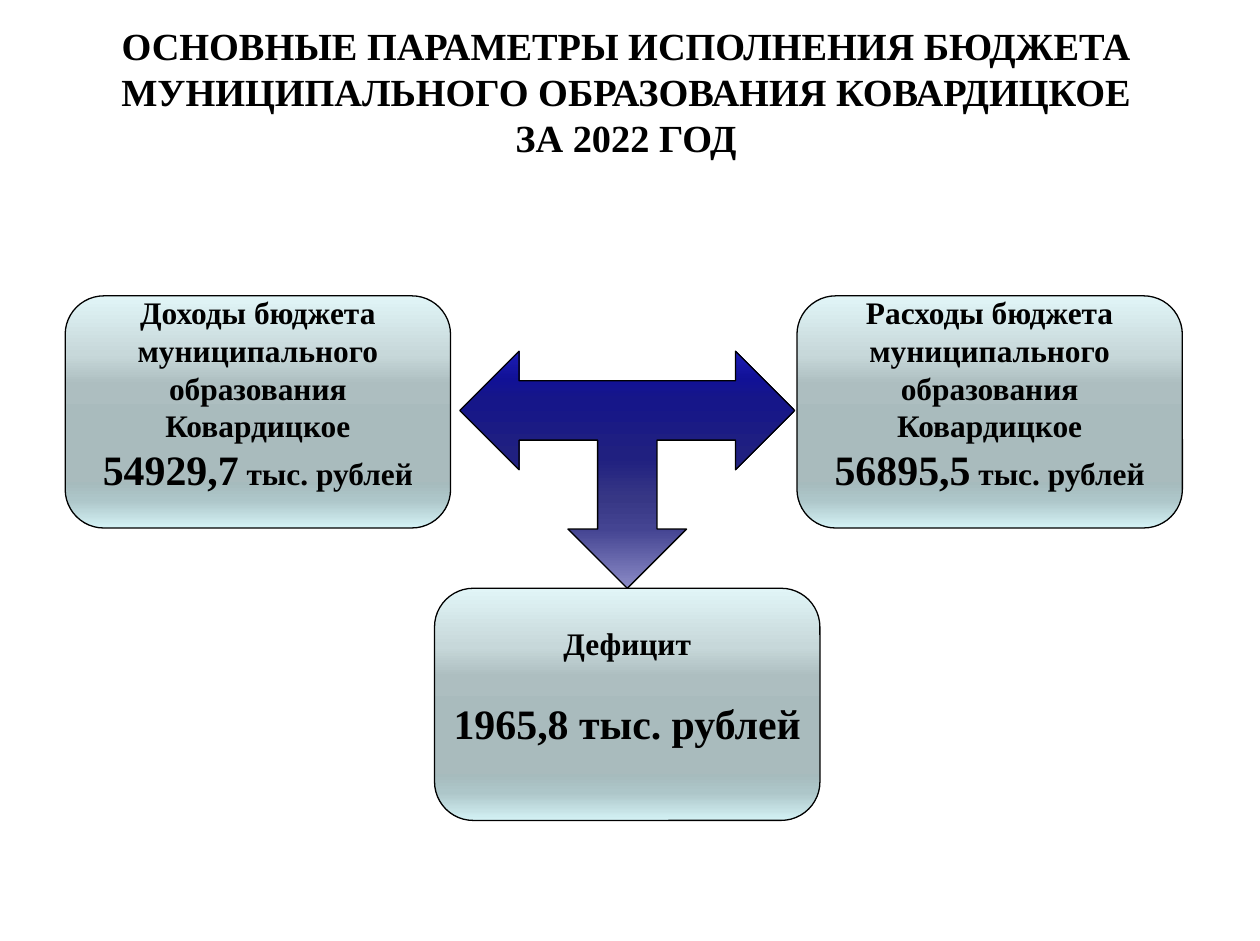
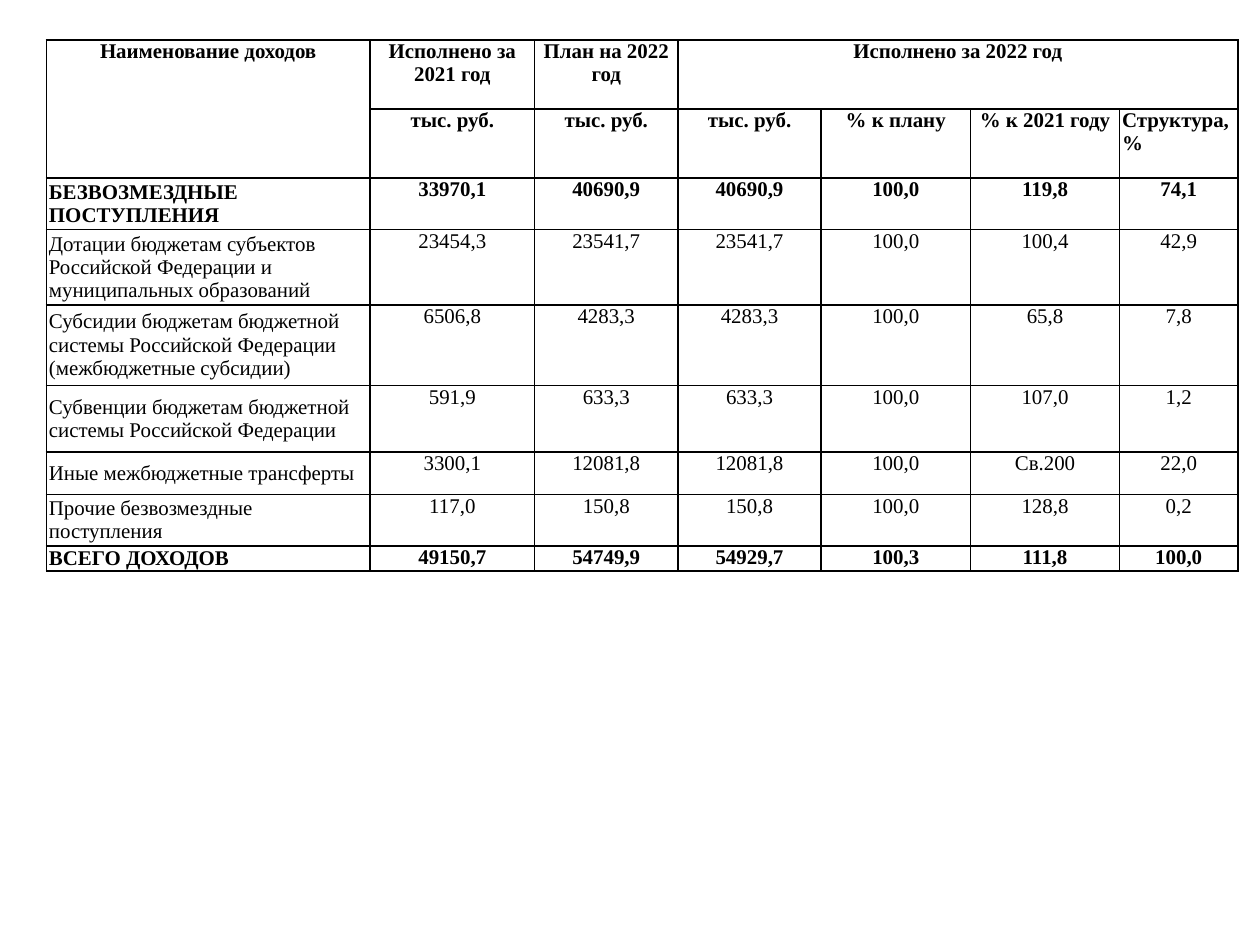
from lxml import etree
from pptx import Presentation
from pptx.dml.color import RGBColor
from pptx.enum.shapes import MSO_SHAPE
from pptx.enum.text import MSO_ANCHOR, MSO_AUTO_SIZE, PP_ALIGN
from pptx.oxml.ns import qn
from pptx.util import Cm, Pt

CENTER, LEFT = PP_ALIGN.CENTER, PP_ALIGN.LEFT
TOP, MIDDLE = MSO_ANCHOR.TOP, MSO_ANCHOR.MIDDLE
GROW = MSO_AUTO_SIZE.SHAPE_TO_FIT_TEXT
ROUND_RECT = MSO_SHAPE.ROUNDED_RECTANGLE
THREE_WAY_ARROW = MSO_SHAPE.LEFT_RIGHT_UP_ARROW

FONT = "Times New Roman"
COLORS = {"ink": "000000"}
STOPS = (0, 25, 38, 55, 80, 88, 100)
GRADIENTS = {
    "box": ("E1F5F7", "C7D8DA", "ADBEC0", "A9BBBD", "A6BBBD", "ADC6C9", "D4F2F5"),
    "arrow": ("8B8BC6", "444492", "373785", "202080", "161689", "111196", "1C1CB5"),
}

COLUMN_WIDTHS = (6.55, 3.33, 2.9, 2.9, 3.02, 3.02, 2.39)
ROW_HEIGHTS = (1.4, 1.4, 1.04, 1.52, 1.63, 1.35, 0.86, 1.04, 0.5)
HEADER_ROWS = 2
BOLD_ROWS = (0, 1, 2, 8)
INCOME_ROWS = (
    ("Наименование доходов", "Исполнено за 2021 год", "План на 2022 год",
     "Исполнено за 2022 год", "", "", ""),
    ("", "тыс. руб.", "тыс. руб.", "тыс. руб.", "% к плану", "% к 2021 году",
     "Структура, %"),
    ("БЕЗВОЗМЕЗДНЫЕ ПОСТУПЛЕНИЯ",
     "33970,1", "40690,9", "40690,9", "100,0", "119,8", "74,1"),
    ("Дотации бюджетам субъектов Российской Федерации и муниципальных образований",
     "23454,3", "23541,7", "23541,7", "100,0", "100,4", "42,9"),
    ("Субсидии бюджетам бюджетной системы Российской Федерации "
     "(межбюджетные субсидии)",
     "6506,8", "4283,3", "4283,3", "100,0", "65,8", "7,8"),
    ("Субвенции бюджетам бюджетной системы Российской Федерации",
     "591,9", "633,3", "633,3", "100,0", "107,0", "1,2"),
    ("Иные межбюджетные трансферты",
     "3300,1", "12081,8", "12081,8", "100,0", "Св.200", "22,0"),
    ("Прочие безвозмездные поступления",
     "117,0", "150,8", "150,8", "100,0", "128,8", "0,2"),
    ("ВСЕГО ДОХОДОВ",
     "49150,7", "54749,9", "54929,7", "100,3", "111,8", "100,0"),
)


def style_run(r, size, bold=True):
    r.font.name = FONT
    r.font.size = Pt(size)
    r.font.bold = bold
    r.font.color.rgb = RGBColor.from_string(COLORS["ink"])


def write_lines(tf, lines):
    for i, runs in enumerate(lines):
        p = tf.paragraphs[0] if i == 0 else tf.add_paragraph()
        p.alignment = CENTER
        for text, size in runs:
            r = p.add_run()
            r.text = text
            style_run(r, size)


def add_title(slide, box, lines):
    tf = slide.shapes.add_textbox(*map(Cm, box)).text_frame
    tf.word_wrap = True
    tf.auto_size = GROW
    write_lines(tf, [[(line, 22)] for line in lines])


def add_gradient_shape(slide, kind, box, gradient):
    sp = slide.shapes.add_shape(kind, *map(Cm, box))
    sp.shadow.inherit = False
    sp.line.color.rgb = RGBColor.from_string(COLORS["ink"])
    sp.line.width = Pt(0.75)
    sp.fill.gradient()
    sp.fill.gradient_angle = 270
    stops = sp._element.spPr.find(qn("a:gradFill")).find(qn("a:gsLst"))
    for gs in list(stops):
        stops.remove(gs)
    for pos, color in zip(STOPS, GRADIENTS[gradient]):
        gs = etree.SubElement(stops, qn("a:gs"), pos=str(pos * 1000))
        etree.SubElement(gs, qn("a:srgbClr"), val=color)
    return sp


def add_amount_box(slide, box, lines):
    tf = add_gradient_shape(slide, ROUND_RECT, box, "box").text_frame
    tf.word_wrap = False
    tf.vertical_anchor = MIDDLE
    tf.margin_top, tf.margin_bottom = 0, Cm(0.73)
    write_lines(tf, lines)
    return tf


def add_balance_diagram(slide, box):
    left, top, width, height = box
    box_w, box_h = 7.8, 4.7
    low_top = top + height - box_h
    sides = ((left, "Доходы", "54929,7"),
             (left + width - box_w, "Расходы", "56895,5"))
    for x, kind, amount in sides:
        names = (f"{kind} бюджета", "муниципального", "образования", "Ковардицкое")
        lines = [[(name, 18)] for name in names]
        lines.append([(amount, 24), (" тыс. рублей", 18)])
        add_amount_box(slide, (x, top, box_w, box_h), lines)

    arrow_w, arrow_h = 6.78, 4.8
    arrow_left = left + (width - arrow_w) / 2 + 0.07
    arrow = add_gradient_shape(
        slide, THREE_WAY_ARROW,
        (arrow_left, low_top - arrow_h, arrow_w, arrow_h), "arrow")
    arrow.rotation = 180

    deficit_left = arrow_left + (arrow_w - box_w) / 2
    tf = add_amount_box(slide, (deficit_left, low_top, box_w, box_h),
                        [[("Дефицит", 18)], [("1965,8 тыс. рублей", 24)]])
    tf.paragraphs[1].space_before = Pt(20.7)


def style_cell(cell, align, anchor, bold):
    cell.margin_left = cell.margin_right = Cm(0.05)
    cell.margin_top = cell.margin_bottom = 0
    cell.vertical_anchor = anchor
    tcPr = cell._tc.get_or_add_tcPr()
    for side in ("lnL", "lnR", "lnT", "lnB"):
        ln = etree.SubElement(tcPr, qn(f"a:{side}"), w=str(Pt(1)))
        fill = etree.SubElement(ln, qn("a:solidFill"))
        etree.SubElement(fill, qn("a:srgbClr"), val=COLORS["ink"])
    cell.fill.background()
    p = cell.text_frame.paragraphs[0]
    p.alignment = align
    p.font.size = Pt(12)
    for r in p.runs:
        style_run(r, 12, bold)


def add_income_table(slide, left, top):
    box = (left, top, sum(COLUMN_WIDTHS), sum(ROW_HEIGHTS))
    table = slide.shapes.add_table(
        len(ROW_HEIGHTS), len(COLUMN_WIDTHS), *map(Cm, box)).table
    table.first_row = table.horz_banding = False
    for column, width in zip(table.columns, COLUMN_WIDTHS):
        column.width = Cm(width)
    for row, height in zip(table.rows, ROW_HEIGHTS):
        row.height = Cm(height)
    last = len(COLUMN_WIDTHS) - 1
    for i, values in enumerate(INCOME_ROWS):
        for j, text in enumerate(values):
            cell = table.cell(i, j)
            cell.text = text
            is_label = j == 0 and i >= HEADER_ROWS
            align = LEFT if is_label or (i, j) == (1, last) else CENTER
            style_cell(cell, align, MIDDLE if is_label else TOP, i in BOLD_ROWS)
    table.cell(0, 0).merge(table.cell(1, 0))
    table.cell(0, 3).merge(table.cell(0, last))


def main():
    prs = Presentation()
    prs.slide_width, prs.slide_height = Cm(25.5), Cm(19.05)
    blank = prs.slide_layouts[6]

    slide = prs.slides.add_slide(blank)
    add_title(slide, (-0.08, 0.33, 25.5, 3.07), (
        "ОСНОВНЫЕ ПАРАМЕТРЫ ИСПОЛНЕНИЯ БЮДЖЕТА "
        "МУНИЦИПАЛЬНОГО ОБРАЗОВАНИЯ КОВАРДИЦКОЕ",
        "ЗА 2022 ГОД"))
    add_balance_diagram(slide, (1.32, 5.99, 22.61, 10.62))

    slide = prs.slides.add_slide(blank)
    add_income_table(slide, 0.94, 0.81)

    prs.save("out.pptx")


if __name__ == "__main__":
    main()
